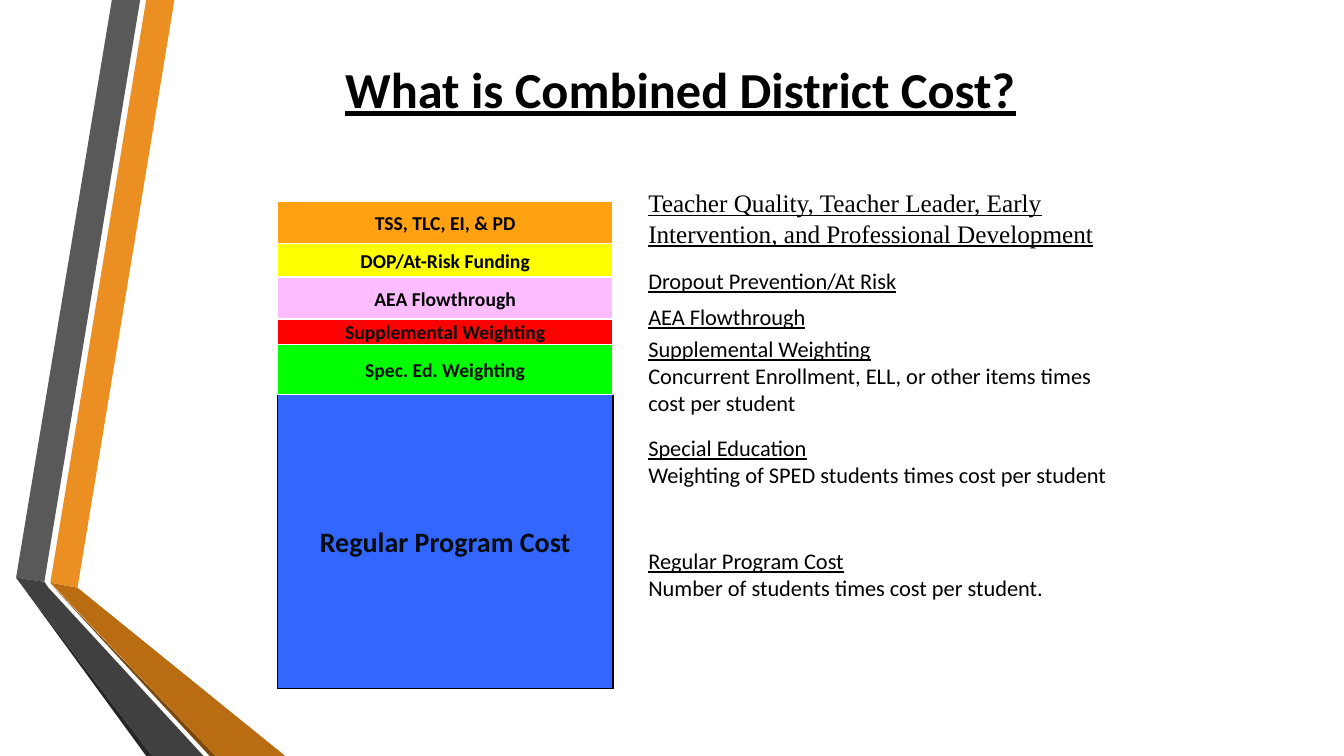
from dataclasses import dataclass

from pptx import Presentation
from pptx.dml.color import RGBColor
from pptx.enum.shapes import MSO_SHAPE
from pptx.enum.text import MSO_ANCHOR, MSO_AUTO_SIZE, PP_ALIGN
from pptx.shapes.autoshape import Shape
from pptx.slide import Slide
from pptx.text.text import TextFrame
from pptx.util import Pt

RECTANGLE = MSO_SHAPE.RECTANGLE
MIDDLE = MSO_ANCHOR.MIDDLE
CENTER, LEFT = PP_ALIGN.CENTER, PP_ALIGN.LEFT
GROW = MSO_AUTO_SIZE.SHAPE_TO_FIT_TEXT

STACK_LEFT, STACK_TOP, STACK_WIDTH = 198, 144, 240
NOTE_LEFT = 456
DARK = "060B0E"
BLACK = "000000"


@dataclass
class Ribbon:
    color: str
    points: list[tuple[float, float]]


@dataclass
class Band:
    label: str
    height: float
    fill: str
    text_color: str = BLACK
    line: str = "FFFFFF"
    size: float = 14


@dataclass
class Note:
    top: float
    height: float
    heading: str
    detail: str = ""
    width: float = 360
    font: str = "Calibri"
    size: float = 16


RIBBONS = [
    Ribbon("EB8F22", [(36, 416.2), (55.4, 419.8), (124.6, 0), (104.4, 0)]),
    Ribbon("595959", [(100.1, 0), (79.9, 0), (11.5, 412.6), (31.7, 415.6)]),
    Ribbon("262626", [(11.5, 412.6), (104.4, 540), (108.7, 540)]),
    Ribbon("7B480B", [(36, 416.9), (149.8, 540), (154.1, 540)]),
    Ribbon("B96C11", [(36, 416.2), (154.1, 540), (203.8, 540), (55.4, 419.8)]),
    Ribbon("404040", [(145.4, 540), (34.6, 419.8), (31.7, 415.6),
                      (11.5, 412.6), (108.7, 540)]),
]

# From the top of the stack to its base
BANDS = [
    Band("TSS, TLC, EI, & PD", 30, "FFA110"),
    Band("DOP/At-Risk Funding", 24, "FFFF00"),
    Band("AEA Flowthrough", 30, "FDBCFF"),
    Band("Supplemental Weighting", 18, "FF0000", DARK),
    Band("Spec. Ed. Weighting", 36, "00FF00", DARK),
    Band("Regular Program Cost", 210, "3366FF", DARK, BLACK, 20),
]

NOTES = [
    Note(130.5, 51, "Teacher Quality, Teacher Leader, Early Intervention, "
         "and Professional Development", font="Times New Roman", size=18),
    Note(187.5, 26.6, "Dropout Prevention/At Risk"),
    Note(213, 26.6, "AEA Flowthrough"),
    Note(236, 65.5, "Supplemental Weighting",
         "Concurrent Enrollment, ELL, or other items times cost per student"),
    Note(306.5, 65.5, "Special Education",
         "Weighting of SPED students times cost per student"),
    Note(387.5, 46, "Regular Program Cost",
         "Number of students times cost per student.", width=348),
]


def rgb(color: str) -> RGBColor:
    return RGBColor.from_string(color)


def add_line(frame: TextFrame, text: str, size: float, font: str = "Calibri",
             color: str = BLACK, bold: bool = False, underline: bool = False,
             align: PP_ALIGN = LEFT) -> None:
    """Write one paragraph, using the frame's first one while it is empty."""
    first = frame.paragraphs[0]
    para = frame.add_paragraph() if first.runs else first
    para.alignment = align
    span = para.add_run()
    span.text = text
    span.font.name = font
    span.font.size = Pt(size)
    span.font.bold = bold
    span.font.underline = underline
    span.font.color.rgb = rgb(color)


def add_ribbon(page: Slide, ribbon: Ribbon) -> None:
    corners = [(Pt(x), Pt(y)) for x, y in ribbon.points]
    builder = page.shapes.build_freeform(*corners[0])
    builder.add_line_segments(corners[1:], close=True)
    shape = builder.convert_to_shape()
    shape.shadow.inherit = False
    shape.fill.solid()
    shape.fill.fore_color.rgb = rgb(ribbon.color)
    shape.line.fill.background()


def add_stack_box(page: Slide, top: float, height: float, line: str) -> Shape:
    box = page.shapes.add_shape(RECTANGLE, Pt(STACK_LEFT), Pt(top),
                                Pt(STACK_WIDTH), Pt(height))
    box.shadow.inherit = False
    box.line.color.rgb = rgb(line)
    box.line.width = Pt(1)
    return box


def add_band(page: Slide, band: Band, top: float) -> None:
    box = add_stack_box(page, top, band.height, band.line)
    box.fill.solid()
    box.fill.fore_color.rgb = rgb(band.fill)
    frame = box.text_frame
    frame.word_wrap = False
    frame.vertical_anchor = MIDDLE
    add_line(frame, band.label, band.size, color=band.text_color, bold=True,
             align=CENTER)


def add_stack(page: Slide) -> None:
    """Pile the bands from the base up, with the outline just above the base."""
    total = sum(band.height for band in BANDS)
    top = STACK_TOP + total
    for band in reversed(BANDS):
        top -= band.height
        add_band(page, band, top)
        if band is BANDS[-1]:
            outline = add_stack_box(page, STACK_TOP, total, "010000")
            outline.fill.background()


def add_text_box(page: Slide, left: float, top: float, width: float,
                 height: float) -> TextFrame:
    box = page.shapes.add_textbox(Pt(left), Pt(top), Pt(width), Pt(height))
    box.text_frame.word_wrap = True
    return box.text_frame


def add_note(page: Slide, note: Note) -> None:
    frame = add_text_box(page, NOTE_LEFT, note.top, note.width, note.height)
    frame.auto_size = GROW
    add_line(frame, note.heading, note.size, note.font, underline=True)
    if note.detail:
        add_line(frame, note.detail, note.size, note.font)


def main() -> None:
    deck = Presentation()
    deck.slide_width, deck.slide_height = Pt(960), Pt(540)
    page = deck.slides.add_slide(deck.slide_layouts[6])
    for ribbon in RIBBONS:
        add_ribbon(page, ribbon)
    title = add_text_box(page, 162, 18, 648, 90)
    title.vertical_anchor = MIDDLE
    add_line(title, "What is Combined District Cost?", 36, bold=True,
             underline=True, align=CENTER)
    add_stack(page)
    for note in NOTES:
        add_note(page, note)
    deck.save("out.pptx")


if __name__ == "__main__":
    main()
